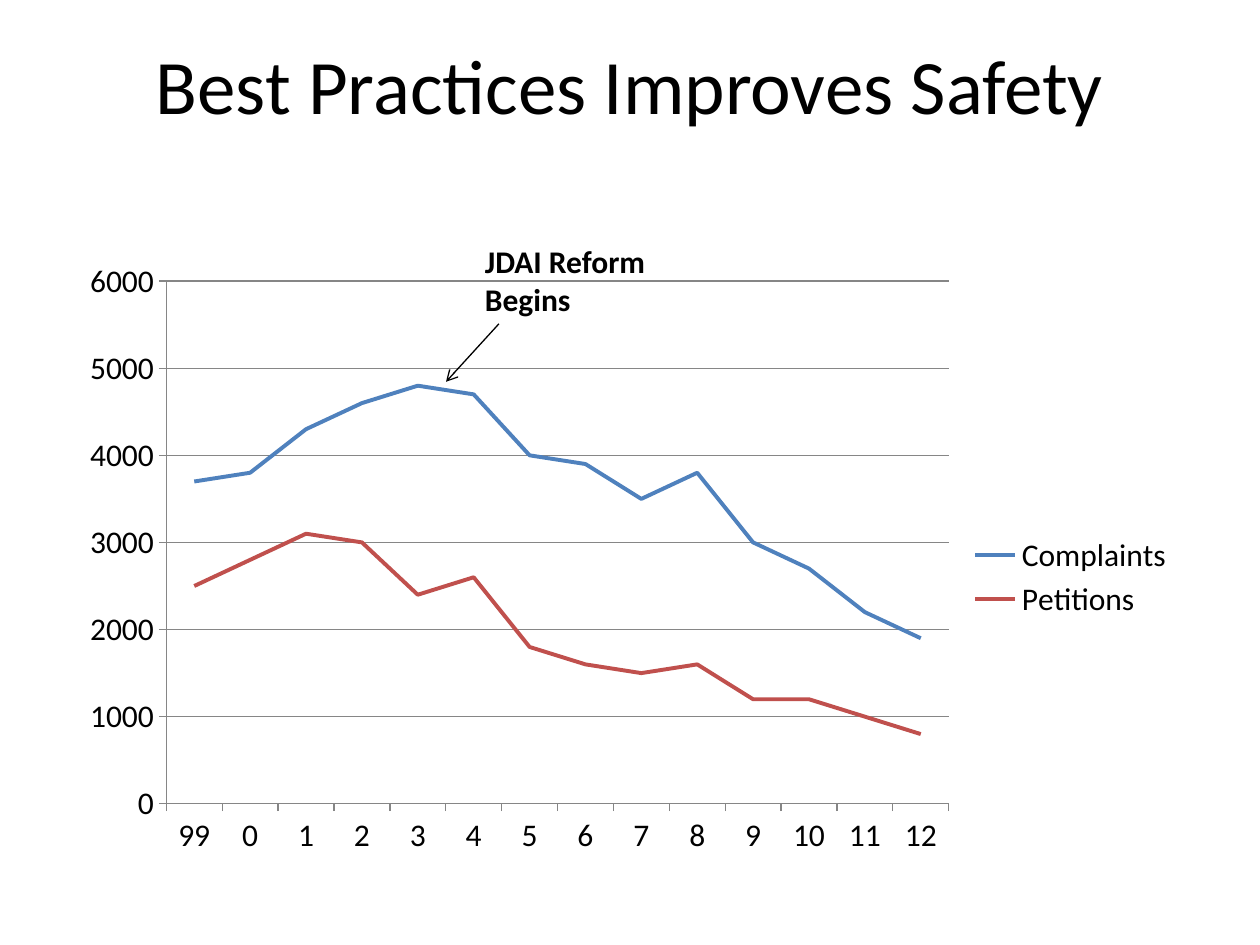
from lxml import etree
from pptx import Presentation
from pptx.chart.data import CategoryChartData
from pptx.dml.color import RGBColor
from pptx.enum.chart import XL_CHART_TYPE, XL_LEGEND_POSITION, XL_TICK_MARK
from pptx.enum.shapes import MSO_CONNECTOR
from pptx.enum.text import MSO_ANCHOR, MSO_AUTO_SIZE, PP_ALIGN
from pptx.oxml.ns import qn
from pptx.util import Inches, Pt

FONT = "Calibri"
BLACK = RGBColor(0x00, 0x00, 0x00)
GRAY = RGBColor(0x86, 0x86, 0x86)
BLUE = RGBColor(0x4F, 0x81, 0xBD)
RED = RGBColor(0xC0, 0x50, 0x4D)

YEARS = ["99"] + [str(year) for year in range(13)]
SERIES = [
    ("Complaints", BLUE, [3700, 3800, 4300, 4600, 4800, 4700, 4000,
                          3900, 3500, 3800, 3000, 2700, 2200, 1900]),
    ("Petitions", RED, [2500, 2800, 3100, 3000, 2400, 2600, 1800,
                        1600, 1500, 1600, 1200, 1200, 1000, 800]),
]
PLOT_AREA = {"x": 0.1, "y": 0.03, "w": 0.69, "h": 0.83}


def style_font(font, size, bold=False):
    font.name = FONT
    font.size = Pt(size)
    font.bold = bold
    font.color.rgb = BLACK


def add_title(slide, left, top, width, height):
    title = slide.shapes.title
    title.left, title.top, title.width, title.height = left, top, width, height
    frame = title.text_frame
    frame.text = "Best Practices Improves Safety"
    frame.vertical_anchor = MSO_ANCHOR.MIDDLE
    para = frame.paragraphs[0]
    para.alignment = PP_ALIGN.CENTER
    style_font(para.runs[0].font, 44)


def fix_plot_area(chart):
    """Place the inner plot area by fractions of the chart box."""
    plot_area = chart.plots[0]._element.getparent()
    for old in plot_area.findall(qn("c:layout")):
        plot_area.remove(old)
    layout = etree.Element(qn("c:layout"))
    plot_area.insert(0, layout)
    manual = etree.SubElement(layout, qn("c:manualLayout"))
    settings = [("layoutTarget", "inner"), ("xMode", "edge"), ("yMode", "edge")]
    for tag, value in settings + list(PLOT_AREA.items()):
        etree.SubElement(manual, qn(f"c:{tag}")).set("val", str(value))


def add_line_chart(slide, left, top, width, height):
    data = CategoryChartData()
    data.categories = YEARS
    for name, _, values in SERIES:
        data.add_series(name, values)
    chart = slide.shapes.add_chart(
        XL_CHART_TYPE.LINE, left, top, width, height, data).chart
    chart.has_title = False
    style_font(chart.font, 18)

    # Series lines
    plot = chart.plots[0]
    plot.vary_by_categories = False
    for series, (_, color, _) in zip(plot.series, SERIES):
        series.smooth = False
        series.format.line.color.rgb = color
        series.format.line.width = Pt(2.25)

    # Axes and gridlines
    value_axis = chart.value_axis
    value_axis.minimum_scale = 0
    value_axis.maximum_scale = 6000
    value_axis.major_unit = 1000
    value_axis.has_major_gridlines = True
    for axis in (chart.category_axis, value_axis):
        axis.major_tick_mark = XL_TICK_MARK.OUTSIDE
        axis.minor_tick_mark = XL_TICK_MARK.NONE
    for part in (chart.category_axis, value_axis, value_axis.major_gridlines):
        part.format.line.color.rgb = GRAY
        part.format.line.width = Pt(0.75)

    # Legend
    chart.has_legend = True
    chart.legend.position = XL_LEGEND_POSITION.RIGHT
    chart.legend.include_in_layout = False
    fix_plot_area(chart)


def add_callout(slide, left, top, width, height):
    # Label
    label = slide.shapes.add_textbox(left, top, width, height)
    frame = label.text_frame
    frame.word_wrap = True
    frame.auto_size = MSO_AUTO_SIZE.SHAPE_TO_FIT_TEXT
    frame.text = "JDAI Reform Begins"
    style_font(frame.paragraphs[0].runs[0].font, 18, bold=True)

    # Arrow from below the label to the curve
    start_x, start_y = left + Inches(0.21), top + Inches(0.7)
    arrow = slide.shapes.add_connector(
        MSO_CONNECTOR.STRAIGHT, start_x, start_y,
        start_x - Inches(0.42), start_y + Inches(0.46))
    arrow.line.color.rgb = BLACK
    arrow.line.width = Pt(0.75)
    line = arrow.line._get_or_add_ln()
    etree.SubElement(line, qn("a:tailEnd")).set("type", "arrow")
    etree.SubElement(line.getparent(), qn("a:effectLst"))


def main():
    deck = Presentation()
    deck.slide_width, deck.slide_height = Inches(10), Inches(7.5)
    slide = deck.slides.add_slide(deck.slide_layouts[5])
    add_title(slide, Inches(0.25), Inches(0.08), Inches(9.5), Inches(1.17))
    add_line_chart(slide, Inches(0.42), Inches(2.08), Inches(9), Inches(5))
    add_callout(slide, Inches(3.75), Inches(1.87), Inches(1.75), Inches(0.71))
    deck.save("out.pptx")


if __name__ == "__main__":
    main()
